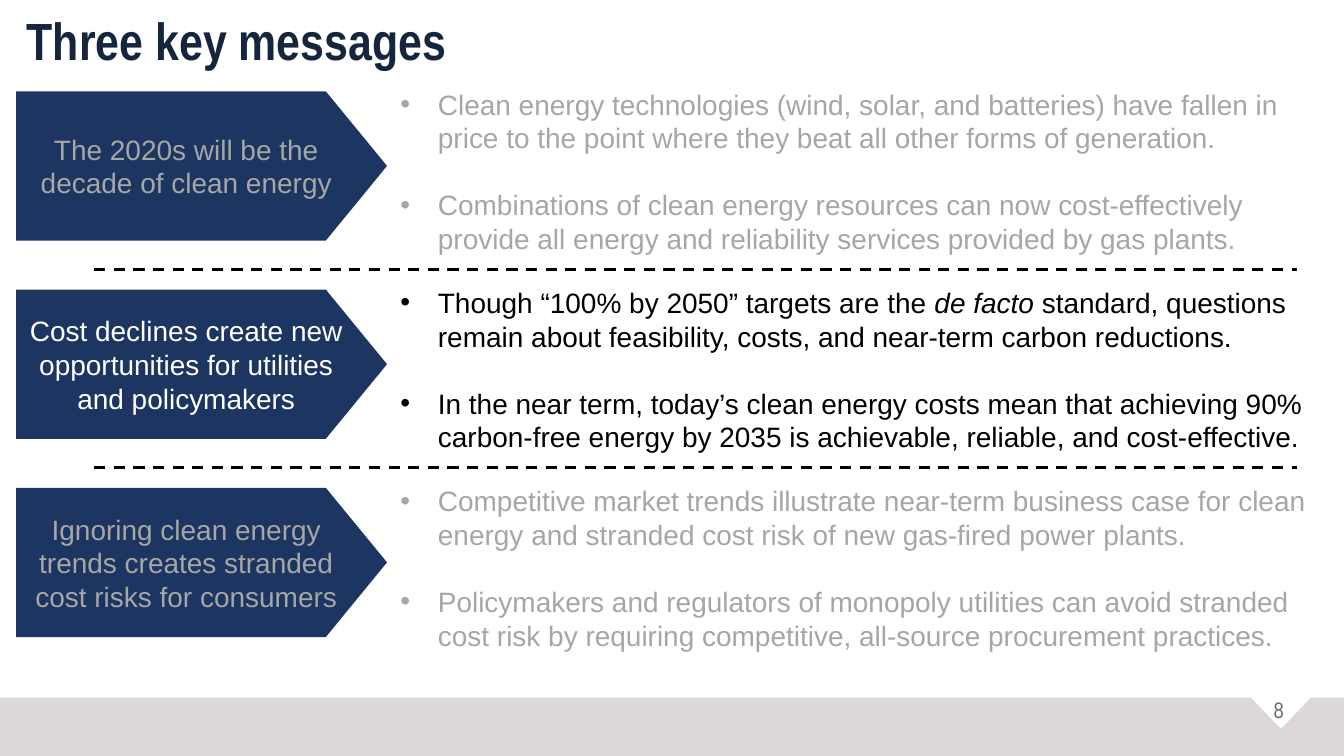
from dataclasses import dataclass

from lxml.etree import SubElement
from pptx import Presentation
from pptx.dml.color import RGBColor
from pptx.enum.dml import MSO_LINE
from pptx.enum.shapes import MSO_CONNECTOR, MSO_SHAPE
from pptx.enum.text import MSO_ANCHOR, PP_ALIGN
from pptx.oxml.ns import qn
from pptx.util import Inches, Pt


@dataclass(frozen=True)
class Theme:
    navy: str = "1D3661"
    title: str = "15253D"
    muted: str = "A6A6A6"
    black: str = "000000"
    white: str = "FFFFFF"
    footer: str = "DBD8D7"
    number: str = "6C6C6C"
    body_font: str = "Arial"
    title_font: str = "Arial Narrow"
    title_size: int = 28
    body_size: int = 15
    number_size: int = 12


class SlideBuilder:
    columns = 100
    rows = 56.25

    def __init__(self, deck, theme):
        self.theme = theme
        self.page = deck.slides.add_slide(deck.slide_layouts[6])
        self.column = deck.slide_width / self.columns
        self.row = deck.slide_height / self.rows

    def place(self, left, top, width, height):
        return (round(left * self.column), round(top * self.row),
                round(width * self.column), round(height * self.row))

    def style(self, para, color, size, font, bold=None):
        for span in para.runs:
            span.font.name = font
            span.font.size = Pt(size)
            span.font.bold = bold
            span.font.color.rgb = RGBColor.from_string(color)

    def shape(self, kind, area, fill):
        shape = self.page.shapes.add_shape(kind, *self.place(*area))
        shape.shadow.inherit = False
        shape.fill.solid()
        shape.fill.fore_color.rgb = RGBColor.from_string(fill)
        shape.line.fill.background()
        return shape

    def notch(self, area):
        shape = self.shape(MSO_SHAPE.ISOSCELES_TRIANGLE, area, self.theme.white)
        shape.rotation = 180
        shape.line.color.rgb = RGBColor.from_string(self.theme.white)
        shape.line.width = Pt(2.25)

    def text_box(self, area):
        box = self.page.shapes.add_textbox(*self.place(*area))
        box.text_frame.word_wrap = True
        return box.text_frame

    def title(self, text, area):
        frame = self.text_box(area)
        frame.vertical_anchor = MSO_ANCHOR.MIDDLE
        frame.margin_left = frame.margin_right = Inches(0.2)
        frame.margin_bottom = Inches(0.1)
        frame.text = text
        para = frame.paragraphs[0]
        para.line_spacing = 0.9
        self.style(para, self.theme.title, self.theme.title_size,
                   self.theme.title_font, True)

    def page_number(self, text, area):
        frame = self.text_box(area)
        frame.text = text
        para = frame.paragraphs[0]
        para.alignment = PP_ALIGN.CENTER
        self.style(para, self.theme.number, self.theme.number_size,
                   self.theme.title_font)

    def arrow(self, text, area, color):
        shape = self.shape(MSO_SHAPE.PENTAGON, area, self.theme.navy)
        shape.adjustments[0] = 0.41
        frame = shape.text_frame
        frame.word_wrap = True
        frame.vertical_anchor = MSO_ANCHOR.MIDDLE
        frame.text = text
        para = frame.paragraphs[0]
        para.alignment = PP_ALIGN.CENTER
        self.style(para, color, self.theme.body_size, self.theme.body_font)

    def bullets(self, points, area, color):
        frame = self.text_box(area)
        for index, point in enumerate(points):
            para = frame.add_paragraph() if index else frame.paragraphs[0]
            properties = para._p.get_or_add_pPr()
            properties.set("marL", str(Inches(0.28)))
            properties.set("indent", str(-Inches(0.28)))
            SubElement(properties, qn("a:buFont"), typeface="Arial")
            SubElement(properties, qn("a:buChar"), char="•")
            if index:
                para.space_before = Pt(18)
            for position, words in enumerate(point.split("*")):
                span = para.add_run()
                span.text = words
                span.font.italic = position % 2 == 1
            self.style(para, color, self.theme.body_size, self.theme.body_font)

    def divider(self, left, right, top):
        x, y, width, _ = self.place(left, top, right - left, 0)
        line = self.page.shapes.add_connector(
            MSO_CONNECTOR.STRAIGHT, x, y, x + width, y)
        line.line.color.rgb = RGBColor.from_string(self.theme.black)
        line.line.width = Pt(1.5)
        line.line.dash_style = MSO_LINE.DASH
        SubElement(line._element.spPr, qn("a:effectLst"))


def main():
    deck = Presentation()
    deck.slide_width = Inches(10)
    deck.slide_height = Inches(5.625)
    theme = Theme()
    builder = SlideBuilder(deck, theme)

    builder.shape(MSO_SHAPE.RECTANGLE, (0, 51.9, 100, 4.35), theme.footer)
    builder.notch((93.2, 51.8, 4.2, 2.2))
    builder.page_number("8", (93.2, 51.3, 3.9, 3))
    builder.title("Three key messages", (0, -0.1, 100, 7.2))

    messages = [
        ("The 2020s will be the decade of clean energy",
         ["Clean energy technologies (wind, solar, and batteries) have fallen in "
          "price to the point where they beat all other forms of generation.",
          "Combinations of clean energy resources can now cost-effectively "
          "provide all energy and reliability services provided by gas plants."],
         theme.muted, theme.muted),
        ("Cost declines create new opportunities for utilities and policymakers",
         ["Though “100% by 2050” targets are the *de facto* standard, questions "
          "remain about feasibility, costs, and near-term carbon reductions.",
          "In the near term, today’s clean energy costs mean that achieving 90% "
          "carbon-free energy by 2035 is achievable, reliable, and cost-effective."],
         theme.white, theme.black),
        ("Ignoring clean energy trends creates stranded cost risks for consumers",
         ["Competitive market trends illustrate near-term business case for clean "
          "energy and stranded cost risk of new gas-fired power plants.",
          "Policymakers and regulators of monopoly utilities can avoid stranded "
          "cost risk by requiring competitive, all-source procurement practices."],
         theme.muted, theme.muted),
    ]
    pitch = 14.75
    for index, (headline, points, arrow_color, text_color) in enumerate(messages):
        offset = index * pitch
        builder.arrow(headline, (1.2, 6.8 + offset, 27.6, 11.1), arrow_color)
        builder.bullets(points, (28.8, 6 + offset, 71.2, 13.6), text_color)
        if index:
            builder.divider(7, 96.5, 5.3 + offset)

    deck.save("out.pptx")


if __name__ == "__main__":
    main()
